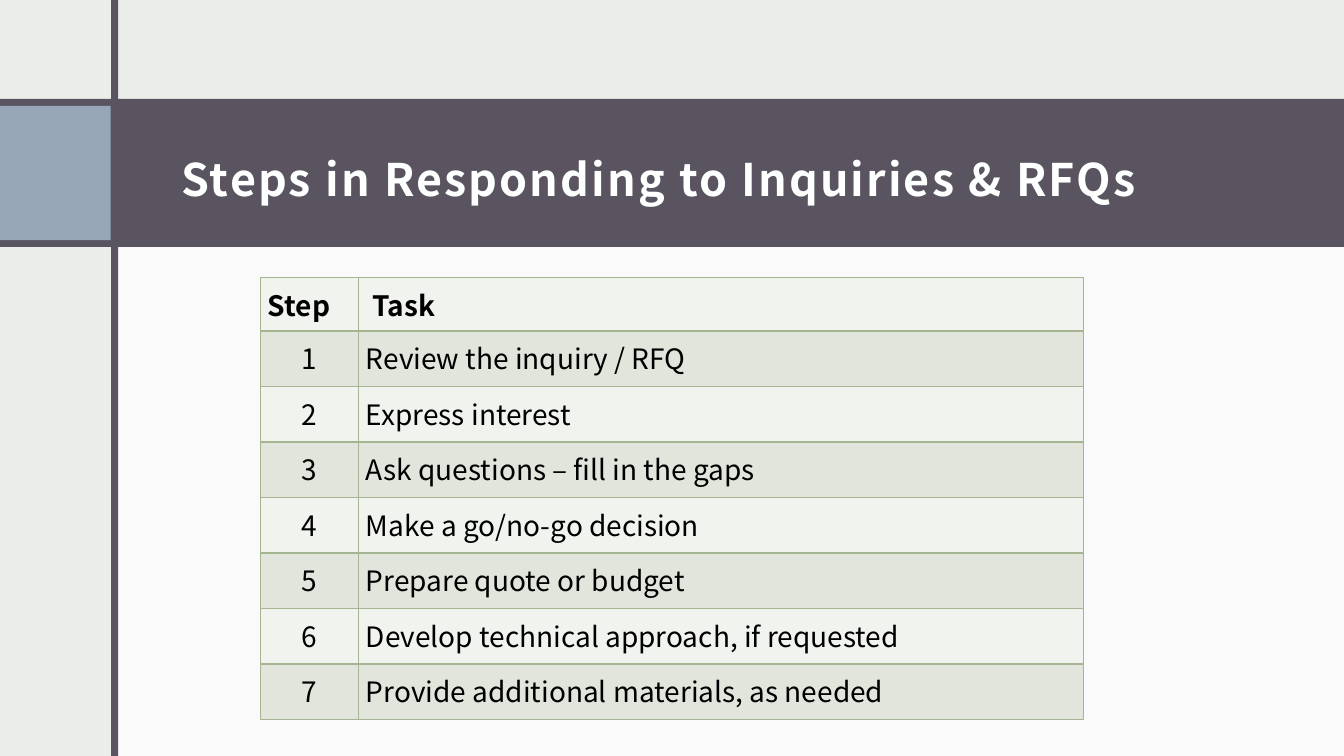
from lxml import etree
from pptx import Presentation
from pptx import util as u
from pptx.dml.color import RGBColor
from pptx.enum import shapes, text
from pptx.oxml import ns

FONT = "Noto Sans CJK JP"
PAPER = RGBColor(0xEB, 0xED, 0xEB)
WHITE = RGBColor(0xFE, 0xFF, 0xFF)
PLUM = RGBColor(0x59, 0x54, 0x60)
BLUE = RGBColor(0x97, 0xA7, 0xB8)
BLACK = RGBColor(0, 0, 0)
SAGE = RGBColor(0xA5, 0xB5, 0x92)
BANDS = RGBColor(0xF0, 0xF3, 0xEE), RGBColor(0xE1, 0xE5, 0xDC)

WIDTH, HEIGHT = 33.87, 19.05
TASKS = [
    "Review the inquiry / RFQ",
    "Express interest",
    "Ask questions – fill in the gaps",
    "Make a go/no-go decision",
    "Prepare quote or budget",
    "Develop technical approach, if requested",
    "Provide additional materials, as needed",
]


class SlideBuilder:
    def __init__(self, prs):
        self.s = prs.slides.add_slide(prs.slide_layouts[5])
        fill = self.s.background.fill
        fill.solid()
        fill.fore_color.rgb = PAPER

    def style(self, p, size, color, bold):
        for r in p.runs:
            r.font.name, r.font.size, r.font.bold = FONT, u.Pt(size), bold
            r.font.color.rgb = color
            etree.SubElement(r._r.rPr, ns.qn("a:ea"), typeface=FONT)

    def rect(self, x, y, w, h, color, opacity=100):
        sp = self.s.shapes.add_shape(
            shapes.MSO_SHAPE.RECTANGLE, u.Cm(x), u.Cm(y), u.Cm(w), u.Cm(h))
        sp.shadow.inherit = False
        sp.line.fill.background()
        sp.fill.solid()
        sp.fill.fore_color.rgb = color
        if opacity < 100:
            clr = sp._element.spPr.find(".//" + ns.qn("a:srgbClr"))
            etree.SubElement(clr, ns.qn("a:alpha"), val=str(opacity * 1000))

    def title(self, words, x, y, w, h):
        sp = self.s.shapes.title
        sp.left, sp.top, sp.width, sp.height = map(u.Cm, (x, y, w, h))
        self.s.shapes._spTree.append(sp._element)  # bring in front of the band
        tf = sp.text_frame
        tf.text = words
        tf.word_wrap, tf.auto_size = True, text.MSO_AUTO_SIZE.NONE
        tf.vertical_anchor = text.MSO_ANCHOR.MIDDLE
        tf.margin_left = tf.margin_right = u.Cm(0.3)
        tf.margin_top, tf.margin_bottom = u.Cm(0.51), u.Cm(0.25)
        p = tf.paragraphs[0]
        p.alignment = text.PP_ALIGN.LEFT
        self.style(p, 32, WHITE, True)
        p.runs[0]._r.rPr.set("spc", "150")

    def cell(self, cell, words, fill, bold, align):
        cell.margin_left = cell.margin_right = u.Cm(0.18)
        cell.margin_top = cell.margin_bottom = 0
        tcPr = cell._tc.get_or_add_tcPr()
        for side in ("lnL", "lnR", "lnT", "lnB"):
            ln = etree.SubElement(tcPr, ns.qn("a:" + side), w=str(u.Pt(1)))
            line = etree.SubElement(ln, ns.qn("a:solidFill"))
            etree.SubElement(line, ns.qn("a:srgbClr"), val=str(SAGE))
        cell.fill.solid()
        cell.fill.fore_color.rgb = fill
        cell.text_frame.text = words
        p = cell.text_frame.paragraphs[0]
        p.alignment, p.line_spacing, p.space_after = align, 1.15, u.Pt(8)
        self.style(p, 20, BLACK, bold)

    def table(self, rows, x, y, widths, heights):
        table = self.s.shapes.add_table(
            len(rows), len(widths), u.Cm(x), u.Cm(y),
            u.Cm(sum(widths)), u.Cm(sum(heights))).table
        table.horz_banding = False
        for column, w in zip(table.columns, widths):
            column.width = u.Cm(w)
        for i, (row, h) in enumerate(zip(rows, heights)):
            table.rows[i].height = u.Cm(h)
            for j, words in enumerate(row):
                centred = i > 0 and j == 0
                align = text.PP_ALIGN.CENTER if centred else text.PP_ALIGN.LEFT
                self.cell(table.cell(i, j), words, BANDS[i % 2], i == 0, align)


def main():
    prs = Presentation()
    prs.slide_width, prs.slide_height = u.Cm(WIDTH), u.Cm(HEIGHT)
    b = SlideBuilder(prs)

    # Content panel, title band and vertical stripe
    b.rect(2.9, 5.92, WIDTH - 2.9, HEIGHT - 5.92, WHITE, 75)
    b.rect(0, 2.49, WIDTH, 3.73, PLUM)
    b.rect(0, 2.67, 2.79, 3.38, BLUE)
    b.rect(2.8, 0, 0.18, HEIGHT, PLUM)

    # Title
    b.title("Steps in Responding to Inquiries & RFQs", 4.27, 2.67, 27.81, 3.38)

    # Numbered steps
    steps = [(str(n), task) for n, task in enumerate(TASKS, 1)]
    b.table([("Step", " Task")] + steps, 6.57, 6.99,
            [2.47, 18.26], [1.35] + [1.4] * len(steps))

    prs.save("out.pptx")


if __name__ == "__main__":
    main()
